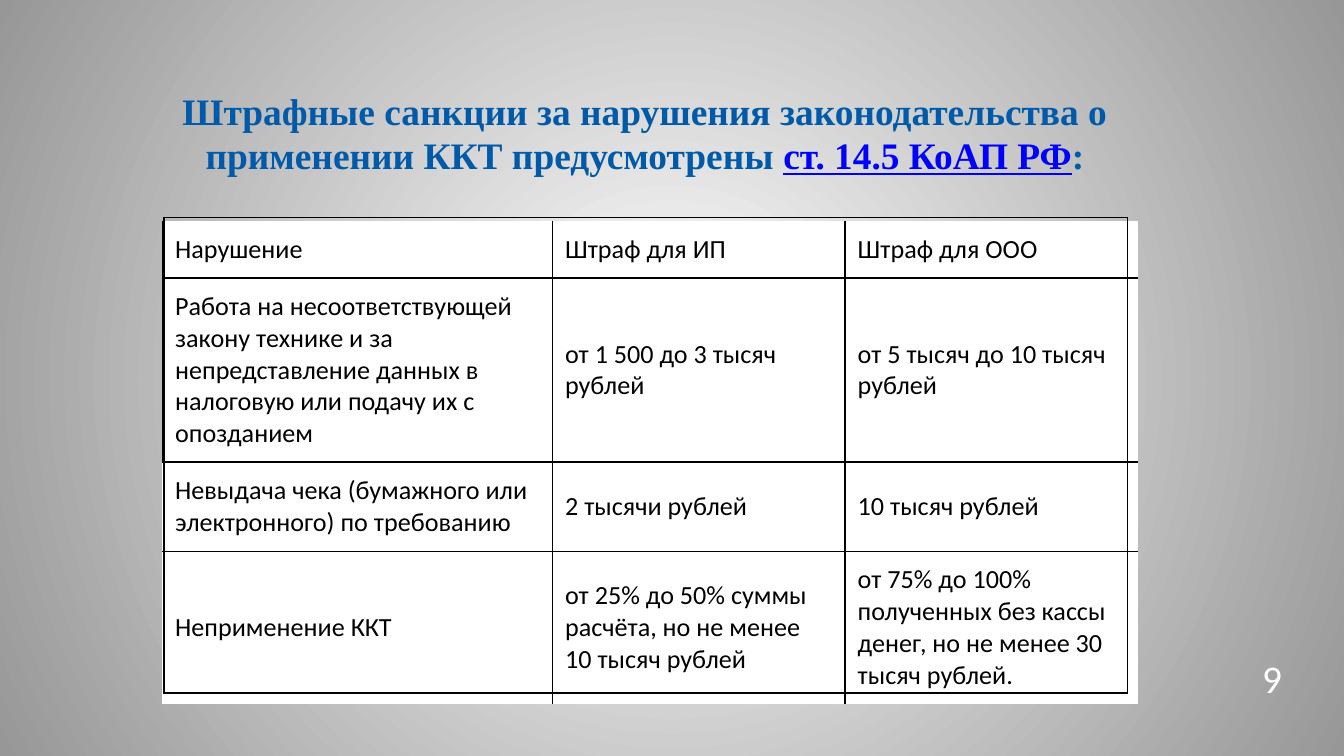
"""Build the slide on fines for breaking cash register law."""
from dataclasses import dataclass

from lxml.etree import SubElement
from pptx import Presentation
from pptx.dml.color import RGBColor as RGB
from pptx.enum.text import MSO_ANCHOR as Anchor, PP_ALIGN as Align
from pptx.oxml import parse_xml
from pptx.oxml.ns import nsdecls, qn
from pptx.util import Cm, Pt

HUES = {"ink": "000000", "paper": "FFFFFF", "edge": "979797",
        "head": "005AA9", "link": "0000FF"}
INSET = {"margin_left": Cm(0.24), "margin_right": Cm(0.24)}
CELL = {**INSET, "margin_top": Cm(0.24), "margin_bottom": Cm(0.24),
        "vertical_anchor": Anchor.MIDDLE}
TEXT = {**INSET, "margin_top": Cm(0.11), "margin_bottom": Cm(0.11),
        "word_wrap": True}
PLAIN = {"first_row": False, "horz_banding": False}
SIDES = ("L", "R", "T", "B")


@dataclass
class Box:
    left: float
    top: float
    width: float
    height: float

    def cms(self) -> tuple:
        return Cm(self.left), Cm(self.top), Cm(self.width), Cm(self.height)


@dataclass
class Row:
    height: float
    cells: tuple[str, ...]


@dataclass
class Part:
    text: str
    hue: str
    line: bool = False


COLS = (7.37, 5.53, 5.53)
ROWS = (
    Row(1.04, ("Нарушение", "Штраф для ИП", "Штраф для ООО")),
    Row(3.4, ("Работа на несоответствующей закону технике и за непредставление "
              "данных в налоговую или подачу их с опозданием",
              "от 1 500 до 3 тысяч рублей", "от 5 тысяч до 10 тысяч рублей")),
    Row(1.63, ("Невыдача чека (бумажного или электронного) по требованию",
               "2 тысячи рублей", "10 тысяч рублей")),
    Row(2.82, ("Неприменение ККТ",
               "от 25% до 50% суммы расчёта, но не менее 10 тысяч рублей",
               "от 75% до 100% полученных без кассы денег, "
               "но не менее 30 тысяч рублей.")),
)
TITLE = (
    Part("Штрафные санкции за нарушения законодательства о применении "
         "ККТ предусмотрены ", "head"),
    Part("ст. 14.5 КоАП РФ", "link", True),
    Part(":", "head"),
)


def apply(item, form: dict) -> None:
    for name, value in form.items():
        setattr(item, name, value)


def paint(font, hue: str, **form) -> None:
    apply(font, form)
    font.color.rgb = RGB.from_string(HUES[hue])


def shade(slide) -> None:
    fill = slide.background.fill
    fill.gradient()
    for stop, hue, place in zip(fill.gradient_stops, ("paper", "edge"), (0, 1)):
        stop.color.rgb = RGB.from_string(HUES[hue])
        stop.position = place
    beam = slide.element.find(".//" + qn("a:lin"))
    beam.getparent().replace(beam, parse_xml(
        f'<a:path {nsdecls("a")} path="circle">'
        '<a:fillToRect l="50000" t="50000" r="50000" b="50000"/></a:path>'))


def rule(cell, drawn: str) -> None:
    props = cell._tc.get_or_add_tcPr()
    for spot, side in enumerate(SIDES):
        line = props.makeelement(qn(f"a:ln{side}"), {"w": str(Pt(1))})
        if side in drawn:
            fill = SubElement(line, qn("a:solidFill"))
            SubElement(fill, qn("a:srgbClr"), val=HUES["ink"])
        else:
            SubElement(line, qn("a:noFill"))
        props.insert(spot, line)


def add_grid(slide, box: Box, rows: int, cols: int):
    grid = slide.shapes.add_table(rows, cols, *box.cms()).table
    apply(grid, PLAIN)
    return grid


def add_fines(slide, box: Box) -> None:
    grid = add_grid(slide, box, len(ROWS), len(COLS))
    for col, width in zip(grid.columns, COLS):
        col.width = Cm(width)
    for r, row in enumerate(ROWS):
        grid.rows[r].height = Cm(row.height)
        for c, text in enumerate(row.cells):
            cell = grid.cell(r, c)
            cell.text = text
            apply(cell, CELL)
            paint(cell.text_frame.paragraphs[0].runs[0].font, "ink",
                  name="Calibri", size=Pt(14), bold=False)
            cell.fill.solid()
            cell.fill.fore_color.rgb = RGB.from_string(HUES["paper"])
            shown = (c > 0 or r < 2, c < len(COLS) - 1, r > 0, r < len(ROWS) - 1)
            rule(cell, "".join(s for s, on in zip(SIDES, shown) if on))


def add_frame(slide, box: Box) -> None:
    cell = add_grid(slide, box, 1, 1).cell(0, 0)
    cell.fill.background()
    rule(cell, "LRTB")


def set_title(slide, box: Box) -> None:
    title = slide.shapes.title
    apply(title, dict(zip(("left", "top", "width", "height"), box.cms())))
    frame = title.text_frame
    apply(frame, {**TEXT, "vertical_anchor": Anchor.TOP})
    para = frame.paragraphs[0]
    para.alignment = Align.CENTER
    for part in TITLE:
        run = para.add_run()
        run.text = part.text
        paint(run.font, part.hue, name="Times New Roman", size=Pt(20),
              bold=True, underline=part.line)


def add_page(slide, box: Box, text: str) -> None:
    frame = slide.shapes.add_textbox(*box.cms()).text_frame
    apply(frame, {**TEXT, "vertical_anchor": Anchor.MIDDLE})
    para = frame.paragraphs[0]
    apply(para, {"alignment": Align.CENTER, "line_spacing": Pt(18.8)})
    run = para.add_run()
    run.text = text
    paint(run.font, "paper", name="Calibri", size=Pt(21))


def main() -> None:
    deck = Presentation()
    apply(deck, {"slide_width": Cm(25.4), "slide_height": Cm(14.29)})
    slide = deck.slides.add_slide(deck.slide_layouts[5])
    shade(slide)
    add_fines(slide, Box(3.07, 4.17, sum(COLS), sum(r.height for r in ROWS)))
    set_title(slide, Box(1.7, 1.55, 20.98, 2.62))
    add_page(slide, Box(23.34, 12.22, 1.4, 1.42), "9")
    add_frame(slide, Box(3.1, 4.11, 18.21, 8.99))
    deck.save("out.pptx")


if __name__ == "__main__":
    main()
